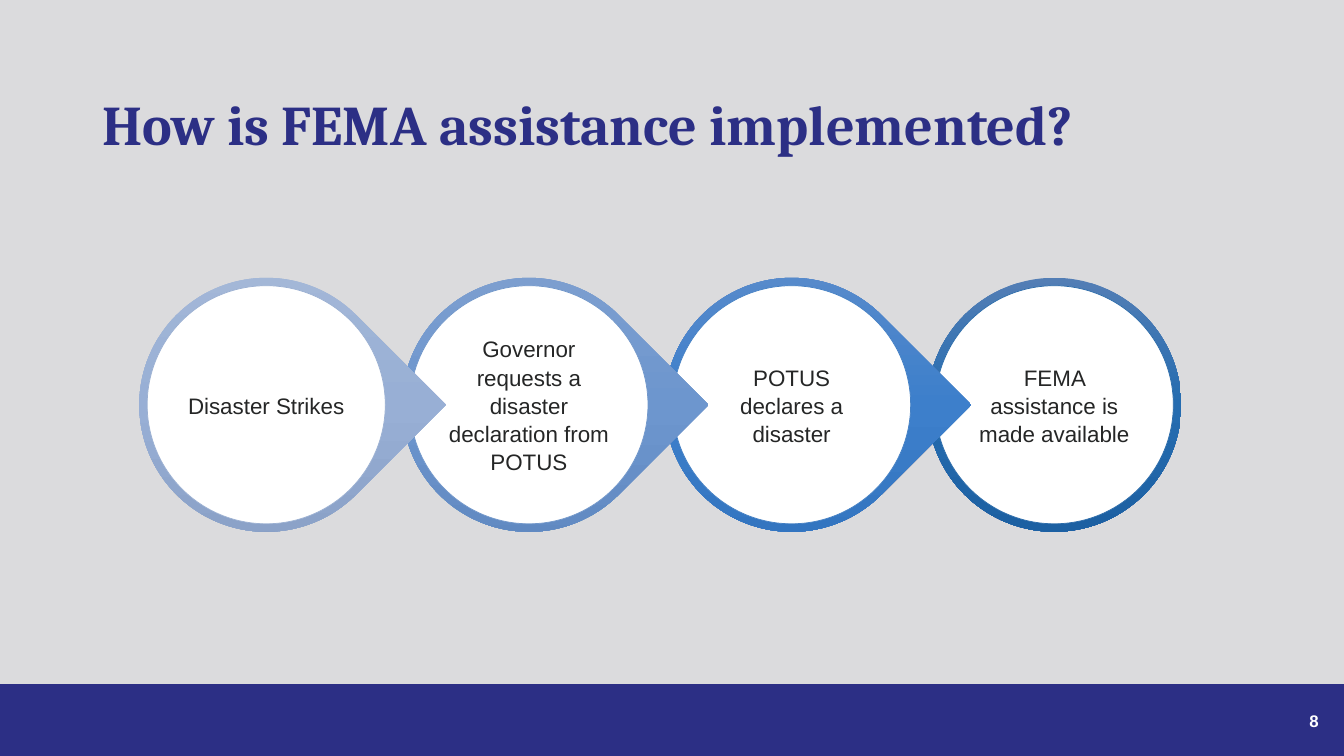
from copy import deepcopy
from dataclasses import dataclass

from pptx import Presentation
from pptx import util as u
from pptx.dml import color
from pptx.enum import shapes, text


@dataclass(frozen=True)
class Theme:
    background: str = "DBDBDD"
    navy: str = "2C2F85"
    white: str = "FFFFFF"
    ink: str = "252626"
    heading_font: str = "Cambria"
    body_font: str = "Arial"
    title_size: int = 40
    step_size: int = 16
    number_size: int = 12


THEME = Theme()
SLIDE_WIDTH, SLIDE_HEIGHT = 33.87, 19.05
FIRST_CENTER, CENTER_Y, STEP_PITCH = 6.71, 10.2, 6.62
RING_SIZE, DISC_SIZE, LABEL_SIZE = 6.4, 6.0, 4.27

STEPS = [
    ("Disaster Strikes", ("A7BAD8", "98AFD5", "849BC1"), "9BB0D2"),
    ("Governor requests a disaster declaration from POTUS",
     ("83A2D0", "6D96CE", "5C84BC"), "7197CA"),
    ("POTUS declares a disaster", ("618ECB", "3D7FCB", "2F71BB"), "4480C4"),
    ("FEMA assistance is made available",
     ("537EB5", "256CB0", "1C60A2"), "2C6CAA"),
]


def rgb(value):
    return color.RGBColor.from_string(value)


def centered(center_x, size):
    return [u.Cm(n) for n in (center_x - size / 2, CENTER_Y - size / 2, size, size)]


def add_solid(page, kind, bounds, fill, line, line_width):
    shape = page.shapes.add_shape(kind, *bounds)
    shape.shadow.inherit = False
    shape.fill.solid()
    shape.fill.fore_color.rgb = rgb(fill)
    shape.line.color.rgb = rgb(line)
    shape.line.width = u.Pt(line_width)


def add_ring(page, kind, bounds, rotation, gradient):
    ring = page.shapes.add_shape(kind, *bounds)
    ring.rotation = rotation
    ring.shadow.inherit = False
    ring.line.fill.background()
    ring.fill.gradient()
    ring.fill.gradient_angle = 270
    fill = ring._element.spPr.gradFill
    fill.set("rotWithShape", "0")
    fill.gsLst.append(deepcopy(fill.gsLst[-1]))
    for index, (stop, value) in enumerate(zip(ring.fill.gradient_stops, gradient)):
        stop.position = index / 2
        stop.color.rgb = rgb(value)


def add_text(page, bounds, words, font, size, ink, align, anchor,
             bold=False, spacing=1.0, inset=None):
    box = page.shapes.add_textbox(*bounds)
    frame = box.text_frame
    frame.word_wrap = True
    frame.vertical_anchor = anchor
    if inset is not None:
        frame.margin_left = frame.margin_right = u.Cm(inset)
        frame.margin_top = frame.margin_bottom = u.Cm(inset)
    para = frame.paragraphs[0]
    para.alignment = align
    para.line_spacing = spacing
    span = para.add_run()
    span.text = words
    span.font.name = font
    span.font.size = u.Pt(size)
    span.font.bold = bold
    span.font.color.rgb = rgb(ink)


def add_step(page, center_x, words, gradient, outline, is_last):
    kind = shapes.MSO_SHAPE.OVAL if is_last else shapes.MSO_SHAPE.TEAR
    add_ring(page, kind, centered(center_x, RING_SIZE), 0 if is_last else 45, gradient)
    add_solid(page, shapes.MSO_SHAPE.OVAL, centered(center_x, DISC_SIZE),
              THEME.white, outline, 0.5)
    add_text(page, centered(center_x, LABEL_SIZE), words, THEME.body_font,
             THEME.step_size, THEME.ink, text.PP_ALIGN.CENTER,
             text.MSO_ANCHOR.MIDDLE, spacing=1.05, inset=0.05)


def main():
    deck = Presentation()
    deck.slide_width, deck.slide_height = u.Cm(SLIDE_WIDTH), u.Cm(SLIDE_HEIGHT)
    page = deck.slides.add_slide(deck.slide_layouts[6])
    page.background.fill.solid()
    page.background.fill.fore_color.rgb = rgb(THEME.background)

    footer = [u.Cm(n) for n in (0, 17.25, SLIDE_WIDTH, 1.8)]
    add_solid(page, shapes.MSO_SHAPE.RECTANGLE, footer, THEME.navy, THEME.navy, 1)
    number = [u.Cm(n) for n in (23.93, 17.65, 9.55, 1.02)]
    add_text(page, number, "8", THEME.body_font, THEME.number_size, THEME.white,
             text.PP_ALIGN.RIGHT, text.MSO_ANCHOR.MIDDLE, bold=True)
    title = [u.Cm(n) for n in (2.34, 1.02, 29.21, 3.07)]
    add_text(page, title, "How is FEMA assistance implemented?", THEME.heading_font,
             THEME.title_size, THEME.navy, text.PP_ALIGN.LEFT,
             text.MSO_ANCHOR.BOTTOM, bold=True, spacing=0.9)

    last = len(STEPS) - 1
    for index, step in reversed(list(enumerate(STEPS))):
        add_step(page, FIRST_CENTER + index * STEP_PITCH, *step, index == last)

    deck.save("out.pptx")


if __name__ == "__main__":
    main()
